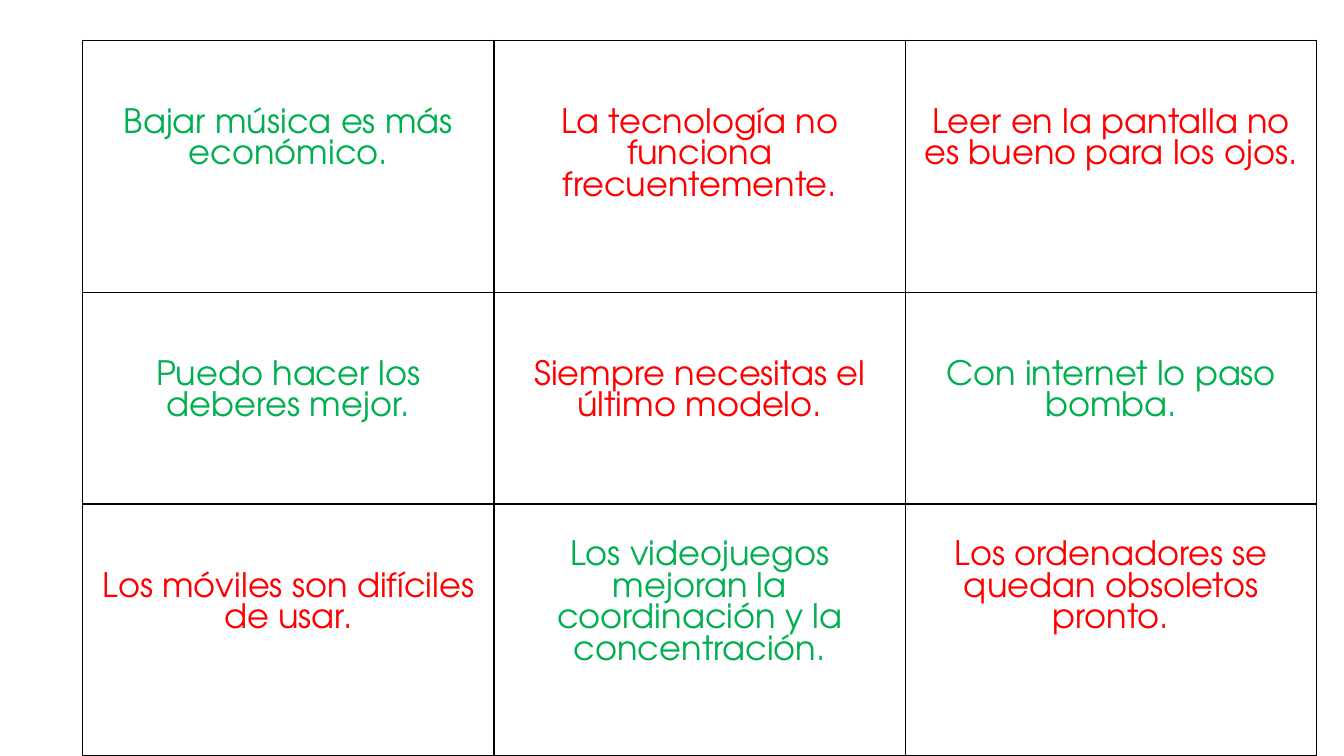
"""Build a three-by-three grid of Spanish opinions on technology."""
from dataclasses import dataclass

from lxml.etree import SubElement
from pptx import Presentation
from pptx.dml.color import RGBColor
from pptx.enum.text import PP_ALIGN as Align
from pptx.oxml.ns import qn
from pptx.table import _Cell as Cell
from pptx.util import Emu, Inches, Pt

ADVANTAGE = RGBColor(0x00, 0xB0, 0x50)
DRAWBACK = RGBColor(0xFF, 0x00, 0x00)
BORDER = RGBColor(0x00, 0x00, 0x00)
FONT = "TeX Gyre Adventor"
FONT_SIZE = Pt(24)
LINE_PITCH = Pt(22.5)
COLUMN_WIDTH = Inches(4.08)
ROW_HEIGHTS = (Inches(2.5), Inches(2.1), Inches(2.5))
GRID_LEFT, GRID_TOP = Inches(0.82), Inches(0.4)


@dataclass(frozen=True)
class Opinion:
    """A statement, its colour and the lines left free above it."""

    text: str
    color: RGBColor
    lines_above: int = 2


OPINIONS = (
    (
        Opinion("Bajar música es más económico.", ADVANTAGE),
        Opinion("La tecnología no funciona frecuentemente.", DRAWBACK),
        Opinion("Leer en la pantalla no es bueno para los ojos.", DRAWBACK),
    ),
    (
        Opinion("Puedo hacer los deberes mejor.", ADVANTAGE),
        Opinion("Siempre necesitas el último modelo.", DRAWBACK),
        Opinion("Con internet lo paso bomba.", ADVANTAGE),
    ),
    (
        Opinion("Los móviles son difíciles de usar.", DRAWBACK),
        Opinion("Los videojuegos mejoran la coordinación y la concentración.", ADVANTAGE, 1),
        Opinion("Los ordenadores se quedan obsoletos pronto.", DRAWBACK, 1),
    ),
)


def draw_borders(cell: Cell) -> None:
    """Give the cell a thin line on each side."""
    properties = cell._tc.get_or_add_tcPr()
    for side in ("lnL", "lnR", "lnT", "lnB"):
        line = SubElement(properties, qn(f"a:{side}"), w=str(Pt(1)))
        fill = SubElement(line, qn("a:solidFill"))
        SubElement(fill, qn("a:srgbClr"), val=str(BORDER))


def write_opinion(cell: Cell, opinion: Opinion) -> None:
    """Put one opinion into its cell."""
    draw_borders(cell)
    cell.fill.background()
    cell.margin_top = Emu(Inches(0.05) + opinion.lines_above * LINE_PITCH)
    statement = cell.text_frame.paragraphs[0]
    statement.text = opinion.text
    statement.alignment = Align.CENTER
    statement.line_spacing = LINE_PITCH
    statement.font.name = FONT
    statement.font.size = FONT_SIZE
    statement.font.color.rgb = opinion.color


def main() -> None:
    """Create and save the presentation."""
    deck = Presentation()
    deck.slide_width, deck.slide_height = Inches(13.33), Inches(7.5)
    slide = deck.slides.add_slide(deck.slide_layouts[6])
    columns = len(OPINIONS[0])
    grid = slide.shapes.add_table(
        len(OPINIONS), columns, GRID_LEFT, GRID_TOP,
        Emu(columns * COLUMN_WIDTH), Emu(sum(ROW_HEIGHTS)),
    ).table
    grid.first_row = grid.horz_banding = False
    for column in grid.columns:
        column.width = COLUMN_WIDTH
    for r, (height, opinions) in enumerate(zip(ROW_HEIGHTS, OPINIONS)):
        grid.rows[r].height = height
        for c, opinion in enumerate(opinions):
            write_opinion(grid.cell(r, c), opinion)
    deck.save("out.pptx")


if __name__ == "__main__":
    main()
